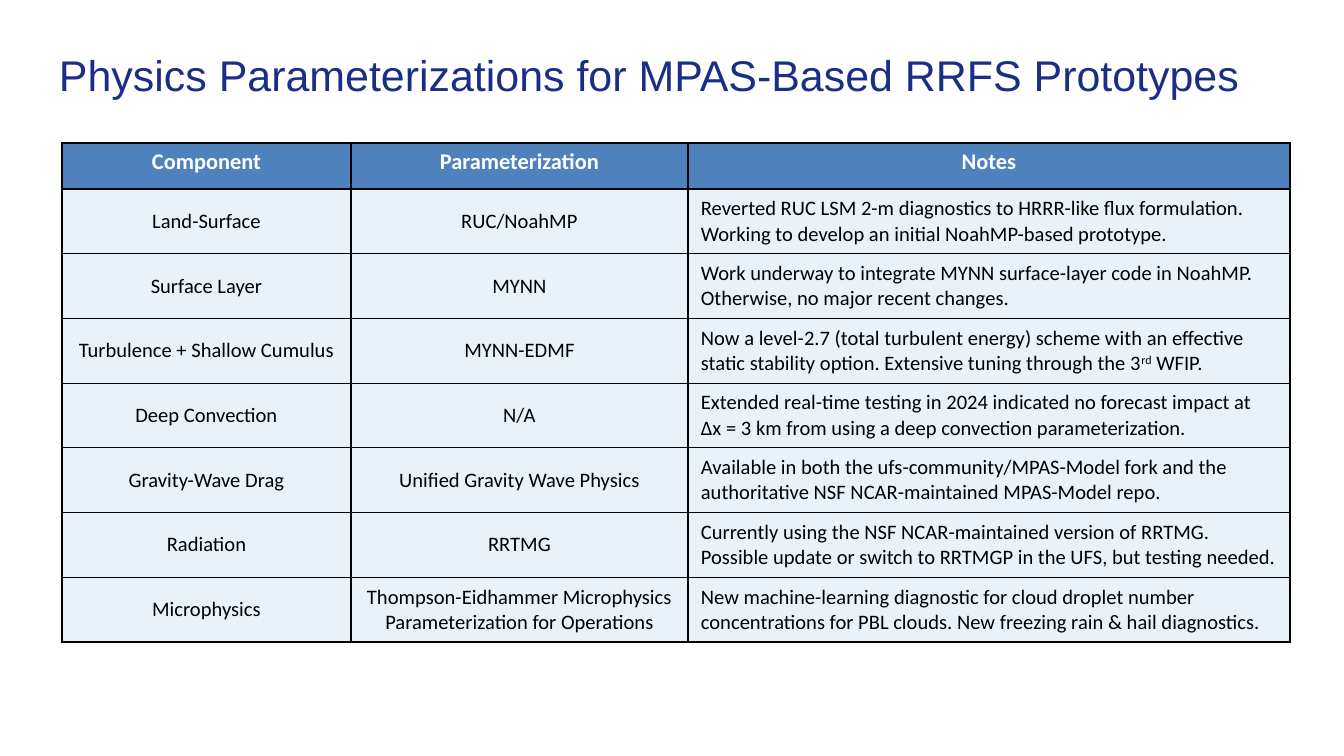
from typing import NamedTuple

from lxml import etree
from pptx import Presentation
from pptx.dml.color import RGBColor
from pptx.enum.text import MSO_ANCHOR, PP_ALIGN
from pptx.oxml.ns import qn
from pptx.util import Emu, Pt

LEFT, CENTER = PP_ALIGN.LEFT, PP_ALIGN.CENTER
TOP, MIDDLE = MSO_ANCHOR.TOP, MSO_ANCHOR.MIDDLE
EMU_PER_PX = 914400 / 134.4
SUPERSCRIPT_MARK = "^"  # encloses superscript text

COLUMN_WIDTHS = [289, 337, 602]
HEADER_HEIGHT, BODY_HEIGHT = 46, 64


class CellStyle(NamedTuple):
    fill: str
    opacity: int
    anchor: MSO_ANCHOR
    margin_x: int
    margin_y: int
    font: dict


class Scheme(NamedTuple):
    component: str
    parameterization: str
    notes: str


HEADER_STYLE = CellStyle("4F81BD", 100, TOP, 12, 5,
                         {"name": "Calibri", "size": Pt(12), "bold": True, "color": "FFFFFF"})
BODY_STYLE = CellStyle("D5E6F5", 50, MIDDLE, 13, 7,
                       {"name": "Calibri", "size": Pt(11), "bold": False, "color": "000000"})
TITLE_FONT = {"name": "Arial", "size": Pt(23), "color": "1A2E85"}

HEADER = Scheme("Component", "Parameterization", "Notes")
SCHEMES = [
    Scheme("Land-Surface", "RUC/NoahMP",
           "Reverted RUC LSM 2-m diagnostics to HRRR-like flux formulation. "
           "Working to develop an initial NoahMP-based prototype."),
    Scheme("Surface Layer", "MYNN",
           "Work underway to integrate MYNN surface-layer code in NoahMP. "
           "Otherwise, no major recent changes."),
    Scheme("Turbulence + Shallow Cumulus", "MYNN-EDMF",
           "Now a level-2.7 (total turbulent energy) scheme with an effective "
           "static stability option. Extensive tuning through the 3^rd^ WFIP."),
    Scheme("Deep Convection", "N/A",
           "Extended real-time testing in 2024 indicated no forecast impact at "
           "Δx = 3 km from using a deep convection parameterization."),
    Scheme("Gravity-Wave Drag", "Unified Gravity Wave Physics",
           "Available in both the ufs-community/MPAS-Model fork and the "
           "authoritative NSF NCAR-maintained MPAS-Model repo."),
    Scheme("Radiation", "RRTMG",
           "Currently using the NSF NCAR-maintained version of RRTMG. "
           "Possible update or switch to RRTMGP in the UFS, but testing needed."),
    Scheme("Microphysics",
           "Thompson-Eidhammer Microphysics Parameterization for Operations",
           "New machine-learning diagnostic for cloud droplet number "
           "concentrations for PBL clouds. New freezing rain & hail diagnostics."),
]


def px(length: int) -> Emu:
    return Emu(round(length * EMU_PER_PX))


def color(hex_value: str) -> RGBColor:
    return RGBColor.from_string(hex_value)


def write_text(paragraph, text: str, font: dict, alignment: PP_ALIGN) -> None:
    paragraph.alignment = alignment
    for index, part in enumerate(text.split(SUPERSCRIPT_MARK)):
        run = paragraph.add_run()
        run.text = part
        for name, value in font.items():
            if name == "color":
                run.font.color.rgb = color(value)
            else:
                setattr(run.font, name, value)
        if index % 2:
            run._r.get_or_add_rPr().set("baseline", "30000")


def add_borders(cell, hex_value: str, width: Pt) -> None:
    properties = cell._tc.get_or_add_tcPr()
    # Border lines must precede the cell fill
    for index, side in enumerate(("lnL", "lnR", "lnT", "lnB")):
        line = etree.Element(qn(f"a:{side}"), w=str(width))
        solid = etree.SubElement(line, qn("a:solidFill"))
        etree.SubElement(solid, qn("a:srgbClr"), val=hex_value)
        properties.insert(index, line)


def fill_cell(cell, text: str, style: CellStyle, alignment: PP_ALIGN) -> None:
    cell.fill.solid()
    cell.fill.fore_color.rgb = color(style.fill)
    if style.opacity < 100:
        fill_color = cell._tc.tcPr.find(f"{qn('a:solidFill')}/{qn('a:srgbClr')}")
        etree.SubElement(fill_color, qn("a:alpha"), val=str(style.opacity * 1000))
    cell.vertical_anchor = style.anchor
    cell.margin_left = cell.margin_right = px(style.margin_x)
    cell.margin_top = cell.margin_bottom = px(style.margin_y)
    add_borders(cell, "000000", Pt(0.75))
    write_text(cell.text_frame.paragraphs[0], text, style.font, alignment)


def add_title(slide, text: str) -> None:
    frame = slide.shapes.add_textbox(px(46), px(32), px(1261), px(85)).text_frame
    frame.word_wrap = True
    frame.vertical_anchor = MIDDLE
    for side in ("left", "right", "top", "bottom"):
        setattr(frame, f"margin_{side}", px(13))
    write_text(frame.paragraphs[0], text, TITLE_FONT, LEFT)


def add_scheme_table(slide) -> None:
    rows = [HEADER, *SCHEMES]
    height = HEADER_HEIGHT + BODY_HEIGHT * len(SCHEMES)
    table = slide.shapes.add_table(len(rows), len(COLUMN_WIDTHS), px(62), px(143),
                                   px(sum(COLUMN_WIDTHS)), px(height)).table
    for column, width in zip(table.columns, COLUMN_WIDTHS):
        column.width = px(width)
    for row_index, scheme in enumerate(rows):
        is_header = row_index == 0
        table.rows[row_index].height = px(HEADER_HEIGHT if is_header else BODY_HEIGHT)
        style = HEADER_STYLE if is_header else BODY_STYLE
        for column_index, text in enumerate(scheme):
            is_note = column_index == 2 and not is_header
            fill_cell(table.cell(row_index, column_index), text, style,
                      LEFT if is_note else CENTER)


def main() -> None:
    presentation = Presentation()
    presentation.slide_width, presentation.slide_height = px(1344), px(756)
    slide = presentation.slides.add_slide(presentation.slide_layouts[6])
    add_scheme_table(slide)
    add_title(slide, "Physics Parameterizations for MPAS-Based RRFS Prototypes")
    presentation.save("out.pptx")


if __name__ == "__main__":
    main()
